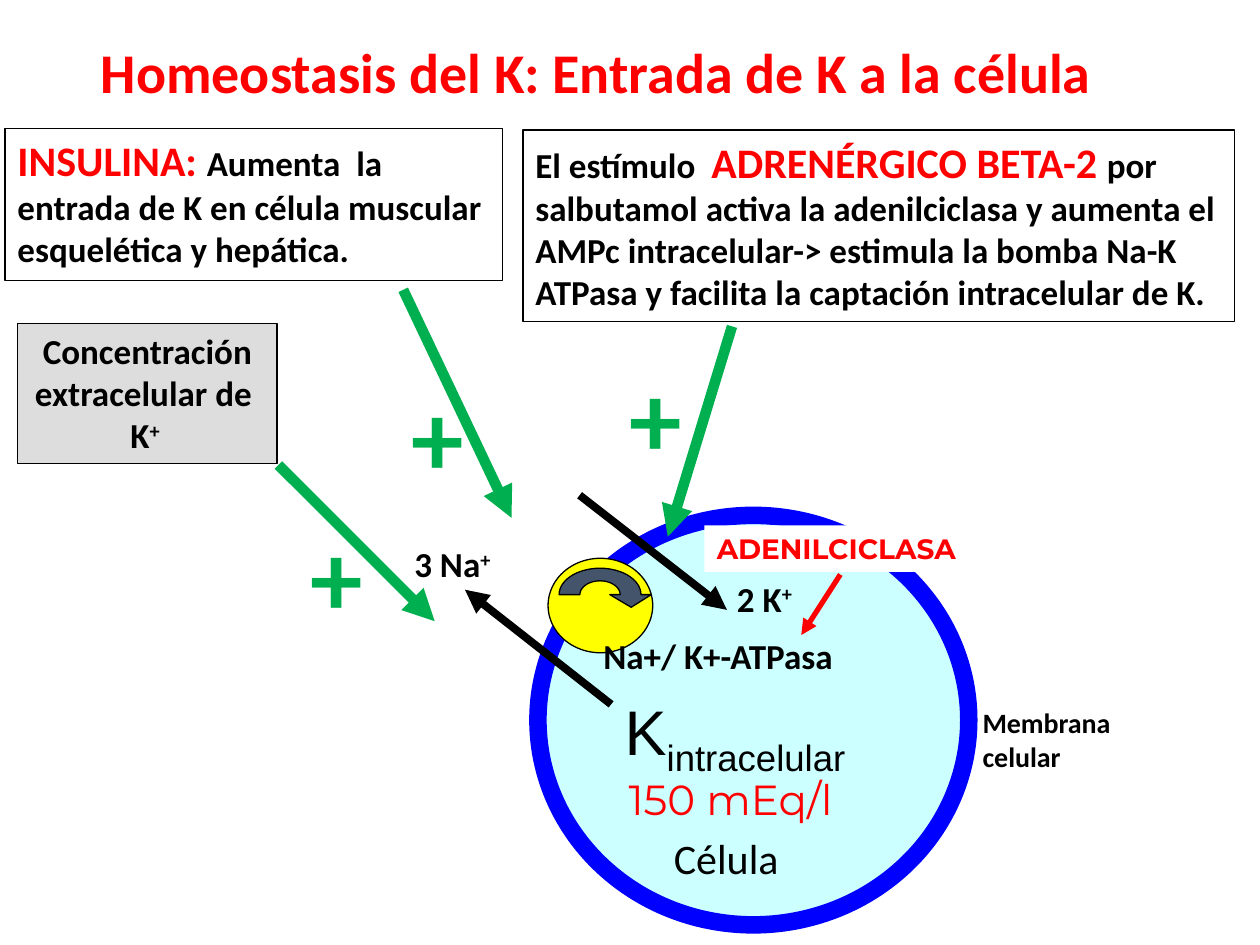
"""Build the slide on potassium homeostasis and its entry into the cell."""
import math

from lxml import etree
from pptx import Presentation
from pptx.dml.color import RGBColor
from pptx.enum.shapes import MSO_CONNECTOR, MSO_SHAPE
from pptx.enum.text import MSO_ANCHOR, MSO_AUTO_SIZE, PP_ALIGN
from pptx.oxml.ns import qn
from pptx.util import Pt

RECTANGLE, OVAL = MSO_SHAPE.RECTANGLE, MSO_SHAPE.OVAL
STRAIGHT = MSO_CONNECTOR.STRAIGHT
LEFT, CENTER = PP_ALIGN.LEFT, PP_ALIGN.CENTER
TOP, BOTTOM = MSO_ANCHOR.TOP, MSO_ANCHOR.BOTTOM
GROW, FIXED = MSO_AUTO_SIZE.SHAPE_TO_FIT_TEXT, MSO_AUTO_SIZE.NONE
COLORS = {
    "black": "000000", "white": "FFFFFF", "red": "FF0000", "green": "00B050",
    "blue": "0000FF", "cyan": "CCFFFF", "yellow": "FFFF00", "gray": "DDDDDD",
    "slate": "44546A",
}


def write_text(paragraph, text, size=20, color="black", bold=True, font="Calibri", baseline=0):
    """Append one formatted run to a paragraph."""
    run = paragraph.add_run()
    run.text = text
    run.font.size = Pt(size)
    run.font.bold = bold
    run.font.name = font
    run.font.color.rgb = RGBColor.from_string(COLORS[color])
    if baseline:
        run.font._element.set("baseline", str(baseline * 1000))


def paint(shape, fill=None, line=None, width=0.75):
    """Set the fill and outline of a shape and remove its shadow."""
    shape.shadow.inherit = False
    if fill:
        shape.fill.solid()
        shape.fill.fore_color.rgb = RGBColor.from_string(COLORS[fill])
    else:
        shape.fill.background()
    if line:
        shape.line.color.rgb = RGBColor.from_string(COLORS[line])
        shape.line.width = Pt(width)
    else:
        shape.line.fill.background()


presentation = Presentation()
presentation.slide_width, presentation.slide_height = Pt(720), Pt(540)
slide = presentation.slides.add_slide(presentation.slide_layouts[5])
shapes = slide.shapes

title = shapes.title
title.left, title.top, title.width, title.height = Pt(50.4), Pt(0.7), Pt(696.2), Pt(100.8)
title_frame = title.text_frame
title_frame.word_wrap = True
title_frame.auto_size = FIXED
title_frame.vertical_anchor = BOTTOM
title_frame.margin_bottom = Pt(41)
title_paragraph = title_frame.paragraphs[0]
title_paragraph.alignment = LEFT
title_paragraph.line_spacing = 0.9
write_text(title_paragraph, "Homeostasis del K: Entrada de K a la célula", size=32, color="red")

cell = shapes.add_shape(OVAL, Pt(307.4), Pt(294.5), Pt(246.2), Pt(234))
paint(cell, "cyan", "blue", 10)
pump = shapes.add_shape(OVAL, Pt(313.2), Pt(319), Pt(59.8), Pt(54))
paint(pump, "yellow", "black")

center_x, center_y = 342.9, 339.8
angles = [math.radians(step) for step in range(0, 181, 6)]
inner_arc = [(center_x + 11.5 * math.cos(a), center_y - 7.9 * math.sin(a)) for a in angles]
outer_arc = [(center_x - 23.4 * math.cos(a), center_y - 15.1 * math.sin(a)) for a in angles]
arrow_tip = [(372.2, center_y), (360.7, 347), (348.5, center_y)]
outline = [(Pt(x), Pt(y)) for x, y in inner_arc + outer_arc + arrow_tip]
builder = shapes.build_freeform(*outline[0])
builder.add_line_segments(outline[1:], close=True)
paint(builder.convert_to_shape(), "slate", "black")

superscript = {"baseline": 30}
membrane = {"size": 16}
emphasis = {"size": 24, "color": "red"}
labels = [
    ((229.7, 306.7, 61.2, 31), [[("3 Na", {}), ("+", superscript)]], {}),
    ((414, 326.2, 46.8, 31.7), [[("2 K", {}), ("+", superscript)]], {}),
    ((337.7, 355, 152.6, 36),
     [[("Na+/ K+-ATPasa", {}), (" ", {"size": 24, "bold": False})]], {}),
    ((10.1, 185, 148.3, 79.9),
     [[("Concentración", {})], [("extracelular de ", {})], [("K", {}), ("+ ", superscript)]],
     {"fill": "gray", "line": "black", "align": CENTER}),
    ((378, 472.3, 77, 36), [[("Célula", {"size": 24, "bold": False})]], {}),
    ((554.4, 399.6, 90.7, 46.1), [[("Membrana", membrane)], [("celular", membrane)]], {}),
    ((352.1, 438.5, 142.6, 36),
     [[("150 mEq/l", {**emphasis, "bold": False, "font": "Montserrat"})]], {}),
    ((349.9, 392.4, 180, 50.4),
     [[("K", {"size": 36, "bold": False, "font": "Arial"}),
       ("intracelular", {"size": 36, "bold": False, "font": "Arial", "baseline": -25})]],
     {"wrap": True, "space_before": 18}),
    ((2.9, 73.4, 284.4, 87.1),
     [[("INSULINA: ", emphasis),
       ("Aumenta  la entrada de K en célula muscular esquelética y hepática.", {})]],
     {"fill": "white", "line": "black", "wrap": True, "auto_size": FIXED}),
    ((298.8, 74.2, 406.8, 109.4),
     [[("El estímulo  ", {}), ("ADRENÉRGICO BETA-2 ", emphasis),
       ("por salbutamol activa la adenilciclasa y aumenta el AMPc intracelular-> "
        "estimula la bomba Na-K ATPasa y facilita la captación intracelular de K.", {})]],
     {"line": "black", "wrap": True}),
    ((402.5, 300.2, 159.8, 26.6),
     [[("ADENILCICLASA", {"size": 16, "color": "red", "font": "Montserrat"})]],
     {"fill": "white"}),
]
for left, top in [(170.6, 288.7), (228.2, 208.8), (352.8, 198)]:
    labels.append(((left, top, 44.6, 79.9), [[("+", {"size": 60, "color": "green"})]], {}))

for bounds, paragraphs, style in labels:
    label = shapes.add_shape(RECTANGLE, *[Pt(value) for value in bounds])
    paint(label, style.get("fill"), style.get("line"))
    frame = label.text_frame
    frame.word_wrap = style.get("wrap", False)
    frame.auto_size = style.get("auto_size", GROW)
    frame.vertical_anchor = TOP
    for index, runs in enumerate(paragraphs):
        paragraph = frame.add_paragraph() if index else frame.paragraphs[0]
        paragraph.alignment = style.get("align", LEFT)
        paragraph.space_before = Pt(style.get("space_before", 0))
        for text, text_format in runs:
            write_text(paragraph, text, **text_format)

arrows = [
    ((349.2, 402.5, 265.7, 337), "black", 4.5),
    ((331.2, 283, 415.4, 348.5), "black", 4.5),
    ((480.2, 328.3, 457.9, 362.9), "red", 3),
    ((418.3, 186.5, 381.6, 306.7), "green", 6),
    ((230.4, 165.6, 292.3, 295.9), "green", 6),
    ((159.1, 265.7, 248.4, 355), "green", 6),
]
for ends, color, width in arrows:
    arrow = shapes.add_connector(STRAIGHT, *[Pt(value) for value in ends])
    arrow.line.color.rgb = RGBColor.from_string(COLORS[color])
    arrow.line.width = Pt(width)
    properties = arrow._element.spPr
    etree.SubElement(properties.find(qn("a:ln")), qn("a:tailEnd"), type="triangle")
    etree.SubElement(properties, qn("a:effectLst"))

presentation.save("out.pptx")
